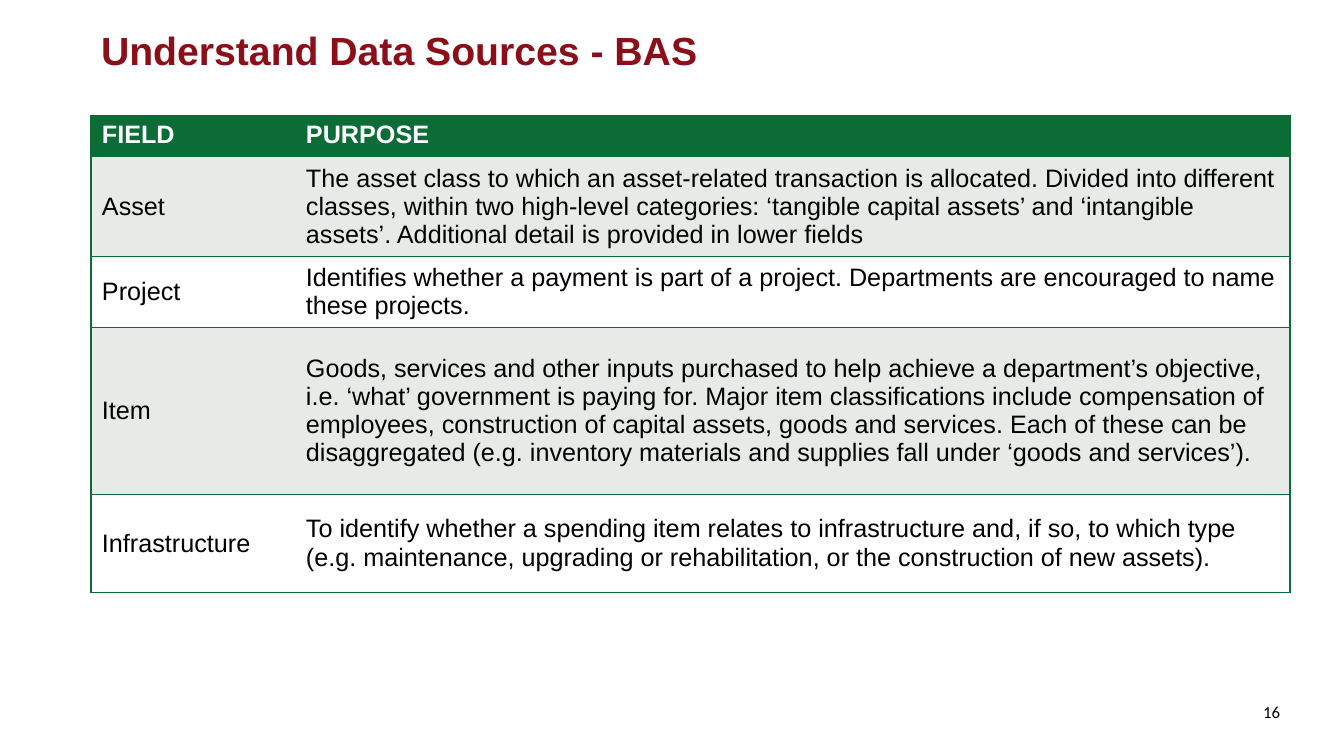
import pptx
import pptx.util
import pptx.dml.color
import pptx.enum.text
import pptx.oxml
import pptx.oxml.ns

EMU_PER_PX = 914400 / 100.8
COLORS = {"title": "8B0E18", "green": "0B6C36", "band": "E7EBE8",
          "white": "FFFFFF", "black": "000000"}
PP_ALIGN = pptx.enum.text.PP_ALIGN
ANCHOR = pptx.enum.text.MSO_ANCHOR

HEADINGS = ("FIELD", "PURPOSE")
FIELDS = [
    ("Asset", "The asset class to which an asset-related transaction is allocated. "
     "Divided into different classes, within two high-level categories: ‘tangible capital "
     "assets’ and ‘intangible assets’. Additional detail is provided in lower fields"),
    ("Project", "Identifies whether a payment is part of a project. Departments are "
     "encouraged to name these projects."),
    ("Item", "Goods, services and other inputs purchased to help achieve a department’s "
     "objective, i.e. ‘what’ government is paying for. Major item classifications include "
     "compensation of employees, construction of capital assets, goods and services. Each of "
     "these can be disaggregated (e.g. inventory materials and supplies fall under ‘goods "
     "and services’)."),
    ("Infrastructure", "To identify whether a spending item relates to infrastructure and, "
     "if so, to which type (e.g. maintenance, upgrading or rehabilitation, or the "
     "construction of new assets)."),
]
COLUMN_WIDTHS = (204, 995)
ROW_HEIGHTS = (39, 97, 68, 167, 98)


def px(length):
    return pptx.util.Emu(round(length * EMU_PER_PX))


def rgb(color):
    return pptx.dml.color.RGBColor.from_string(COLORS[color])


class SlideBuilder:
    def __init__(self, slide):
        self.slide = slide

    def set_text(self, frame, text, size, color, font="Arial", bold=False,
                 align=PP_ALIGN.LEFT, spacing=0):
        frame.text = text
        frame.word_wrap = True
        paragraph = frame.paragraphs[0]
        paragraph.alignment = align
        paragraph.space_before = paragraph.space_after = pptx.util.Pt(spacing)
        style = paragraph.runs[0].font
        style.name, style.size, style.bold = font, pptx.util.Pt(size), bold
        style.color.rgb = rgb(color)

    def title(self, text, left, top, width, height):
        title = self.slide.shapes.title
        title.left, title.top, title.width, title.height = map(px, (left, top, width, height))
        self.set_text(title.text_frame, text, 28, "title", bold=True)
        title.text_frame.auto_size = pptx.enum.text.MSO_AUTO_SIZE.NONE
        title.text_frame.vertical_anchor = ANCHOR.MIDDLE

    def page_number(self, text, left, top, width, height):
        number = self.slide.shapes.add_textbox(*map(px, (left, top, width, height)))
        self.set_text(number.text_frame, text, 12, "black", font="Calibri",
                      align=PP_ALIGN.RIGHT)

    def border(self, cell, sides):
        """Draw the given sides (of L, R, T, B) in green and hide the others."""
        properties = cell._tc.get_or_add_tcPr()
        namespace = pptx.oxml.ns.nsdecls("a")
        for index, side in enumerate("LRTB"):
            paint = (f'<a:solidFill><a:srgbClr val="{COLORS["green"]}"/></a:solidFill>'
                     if side in sides else "<a:noFill/>")
            line = pptx.oxml.parse_xml(
                f'<a:ln{side} {namespace} w="12700">{paint}</a:ln{side}>')
            properties.insert(index, line)

    def cell(self, cell, text, fill, color, bold, spacing, anchor, sides):
        cell.fill.solid()
        cell.fill.fore_color.rgb = rgb(fill)
        cell.margin_left = cell.margin_right = px(11)
        cell.margin_top = cell.margin_bottom = px(5)
        cell.vertical_anchor = anchor
        self.set_text(cell.text_frame, text, 18, color, bold=bold, spacing=spacing)
        self.border(cell, sides)

    def table(self, rows, left, top):
        table = self.slide.shapes.add_table(
            len(rows), len(COLUMN_WIDTHS), px(left), px(top),
            px(sum(COLUMN_WIDTHS)), px(sum(ROW_HEIGHTS))).table
        for column, width in zip(table.columns, COLUMN_WIDTHS):
            column.width = px(width)
        for row, height in zip(table.rows, ROW_HEIGHTS):
            row.height = px(height)
        for r, texts in enumerate(rows):
            header = r == 0
            fill = "green" if header else ("band" if r % 2 else "white")
            for c, text in enumerate(texts):
                self.cell(table.cell(r, c), text, fill,
                          color="white" if header else "black", bold=header,
                          spacing=12 if header else (2, 3)[c],
                          anchor=ANCHOR.TOP if header else ANCHOR.MIDDLE,
                          sides=("LTB", "RTB")[c])


def main():
    deck = pptx.Presentation()
    deck.slide_width, deck.slide_height = px(1344), px(756)
    title_only = deck.slide_layouts[5]
    builder = SlideBuilder(deck.slides.add_slide(title_only))
    builder.page_number("16", 1214, 697, 76, 39)
    builder.table([HEADINGS, *FIELDS], 91, 116)
    builder.title("Understand Data Sources - BAS", 91, 27, 1160, 45)
    deck.save("out.pptx")


if __name__ == "__main__":
    main()
